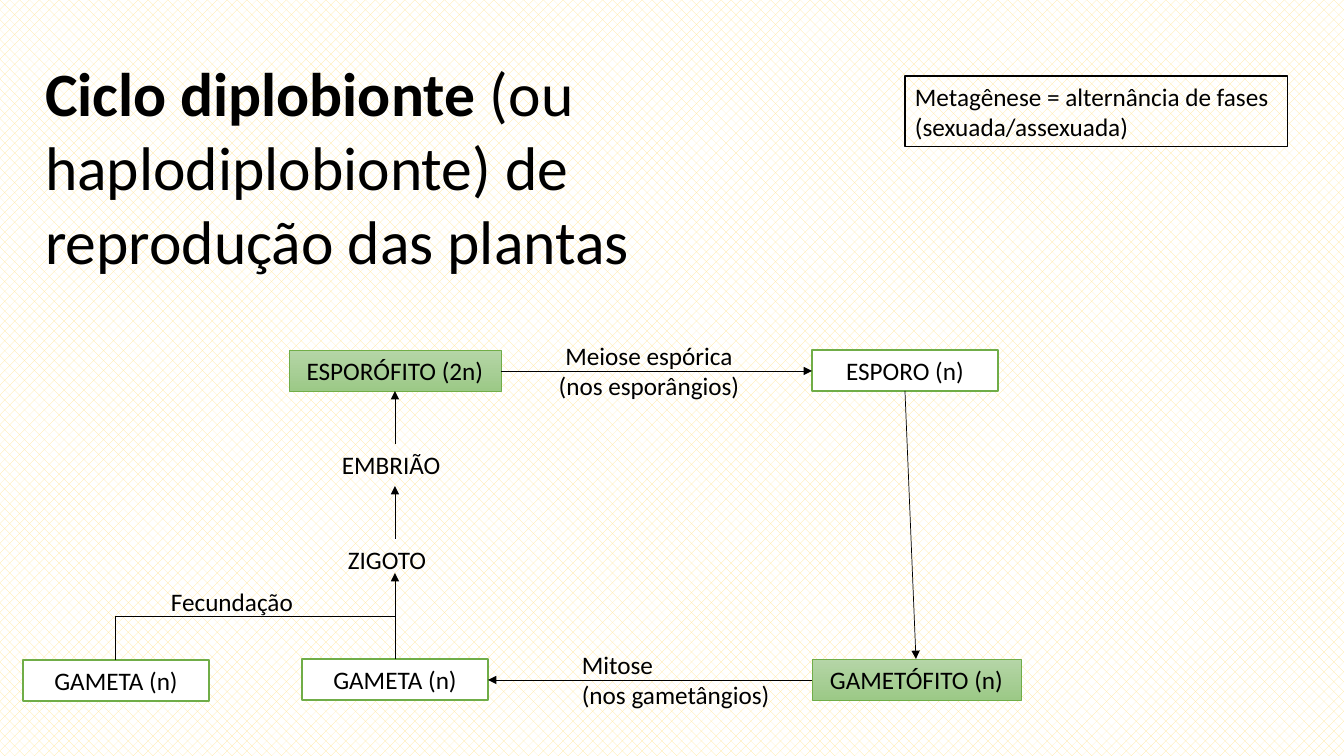
from lxml import etree
from pptx import Presentation, util as u
from pptx.dml.color import RGBColor
from pptx.enum import dml, shapes, text
from pptx.oxml.ns import qn

PX = 12192000 / 1344  # EMU per px


def px(*lengths):
    return [u.Emu(round(n * PX)) for n in lengths]


def rgb(value):
    return RGBColor.from_string(value)


prs = Presentation()
prs.slide_width, prs.slide_height = px(1344, 756)
slide = prs.slides.add_slide(prs.slide_layouts[5])

# Patterned background
paper = slide.background.fill
paper.patterned()
paper.pattern = dml.MSO_PATTERN.PERCENT_30
paper.fore_color.rgb = rgb("FFE699")
paper.back_color.rgb = rgb("FFFFFF")

# Title
title = slide.shapes.title
title.left, title.top, title.width, title.height = px(35, 50, 720, 234)
title.text_frame.vertical_anchor = text.MSO_ANCHOR.TOP
title.text_frame.auto_size = text.MSO_AUTO_SIZE.NONE
heading = title.text_frame.paragraphs[0]
heading.alignment = text.PP_ALIGN.LEFT
heading.line_spacing = 1.0
for words, bold in [("Ciclo diplobionte ", True),
                    ("(ou haplodiplobionte) de reprodução das plantas", False)]:
    run = heading.add_run()
    run.text = words
    run.font.name, run.font.size, run.font.bold = "Calibri", u.Pt(44), bold
    run.font.color.rgb = rgb("000000")

# Stages, labels and note: lines, box in px, style, centred
LEFT, CENTER = text.PP_ALIGN.LEFT, text.PP_ALIGN.CENTER
BLOCKS = [
    (["ESPORÓFITO (2n)"], (289, 350, 212, 41), "plant", CENTER),
    (["ESPORO (n)"], (812, 350, 186, 41), "cell", CENTER),
    (["GAMETÓFITO (n)"], (812, 659, 209, 41), "plant", CENTER),
    (["GAMETA (n)"], (302, 659, 186, 41), "cell", CENTER),
    (["GAMETA (n)"], (23, 660, 186, 41), "cell", CENTER),
    (["Metagênese = alternância de fases (sexuada/assexuada)"],
     (905, 76, 383, 71), "note", LEFT),
    (["Meiose espórica", "(nos esporângios)"], (546, 335, 206, 71), "label", CENTER),
    (["Mitose", "(nos gametângios)"], (572, 644, 229, 71), "label", LEFT),
    (["ZIGOTO"], (338, 539, 115, 41), "label", LEFT),
    (["EMBRIÃO"], (332, 444, 127, 41), "label", LEFT),
    (["Fecundação"], (161, 581, 171, 41), "label", LEFT),
]
OUTLINES = {"plant": ("70AD47", 0.5), "cell": ("70AD47", 1), "note": ("000000", 0.75)}

for lines, box, style, alignment in BLOCKS:
    if style == "label":
        block = slide.shapes.add_textbox(*px(*box))
    else:
        block = slide.shapes.add_shape(shapes.MSO_SHAPE.RECTANGLE, *px(*box))
        block.shadow.inherit = False
        color, weight = OUTLINES[style]
        block.line.color.rgb = rgb(color)
        block.line.width = u.Pt(weight)
        if style == "plant":
            block.fill.gradient()
            block.fill.gradient_angle = 270
            for stop, shade in zip(block.fill.gradient_stops, ("B5D5A7", "9CC987")):
                stop.color.rgb = rgb(shade)
        elif style == "cell":
            block.fill.solid()
            block.fill.fore_color.rgb = rgb("FFFFFF")
        else:
            block.fill.background()
    frame = block.text_frame
    frame.word_wrap = True
    for i, words in enumerate(lines):
        paragraph = frame.add_paragraph() if i else frame.paragraphs[0]
        paragraph.alignment = alignment
        run = paragraph.add_run()
        run.text = words
        run.font.name, run.font.size = "Calibri", u.Pt(18)
        run.font.color.rgb = rgb("000000")

# Arrows of the cycle, then the plain elbow from the second gamete
STRAIGHT, ELBOW = shapes.MSO_CONNECTOR.STRAIGHT, shapes.MSO_CONNECTOR.ELBOW
LINKS = [
    (STRAIGHT, (905, 391, 916, 659)),
    (STRAIGHT, (501, 371, 812, 371)),
    (STRAIGHT, (812, 680, 488, 680)),
    (STRAIGHT, (395, 659, 395, 573)),
    (STRAIGHT, (395, 539, 395, 486)),
    (STRAIGHT, (395, 444, 395, 391)),
    (ELBOW, (277, 778, 233, 498)),  # ends before the quarter turn
]
for kind, ends in LINKS:
    link = slide.shapes.add_connector(kind, *px(*ends))
    link.line.color.rgb = rgb("000000")
    link.line.width = u.Pt(0.5)
    properties = link._element.spPr
    etree.SubElement(properties, qn("a:effectLst"))
    if kind == ELBOW:
        properties.find(qn("a:xfrm")).set("rot", "5400000")
        properties.find(qn("a:prstGeom")).set("prst", "bentConnector2")
    else:
        etree.SubElement(properties.find(qn("a:ln")), qn("a:tailEnd"), type="triangle")

prs.save("out.pptx")
